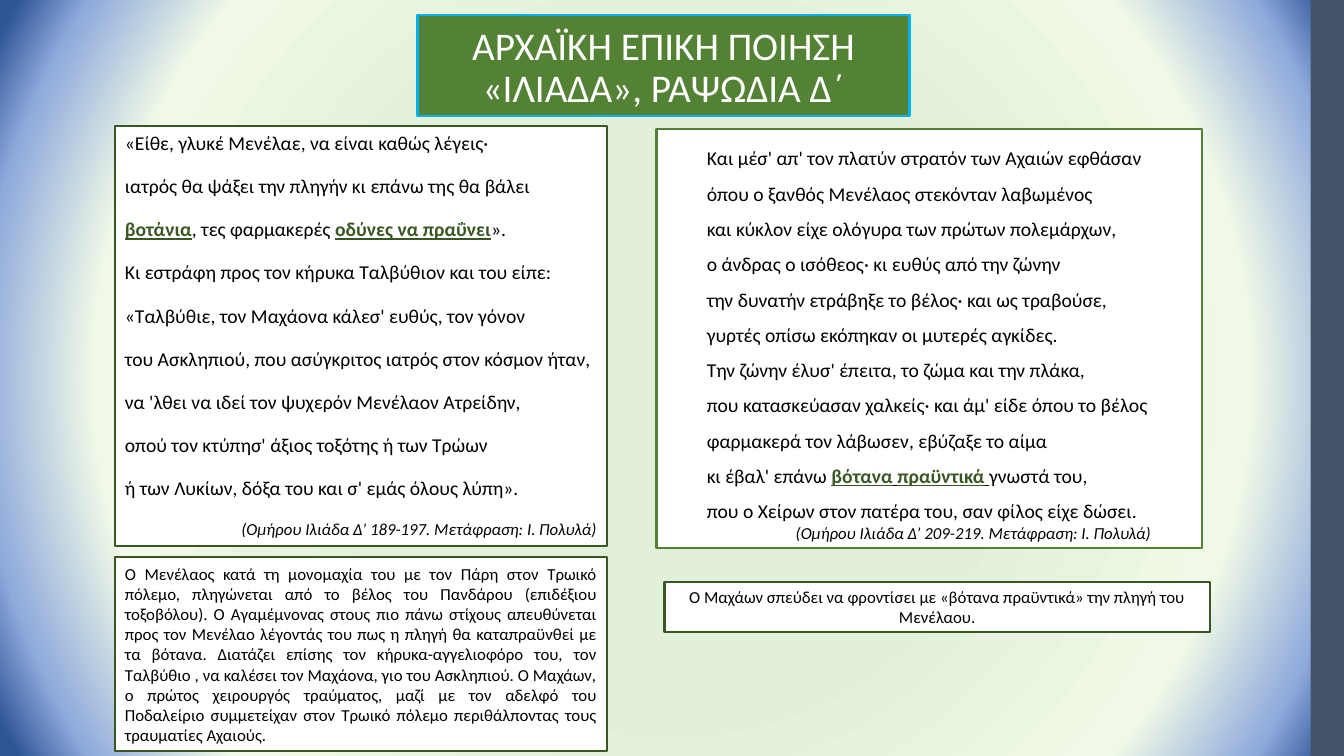
import pptx
import pptx.util
import pptx.oxml
import pptx.dml.color
import pptx.enum.shapes
import pptx.enum.text

Inches, Pt = pptx.util.Inches, pptx.util.Pt
ALIGN = pptx.enum.text.PP_ALIGN
ANCHOR = pptx.enum.text.MSO_ANCHOR

COLORS = {"white": "FFFFFF", "black": "000000", "green": "548235",
          "dark": "385723", "cyan": "00B0F0", "slate": "44546A"}
GLOW = [(42, "E2F0D9"), (75, "F0F9E7"), (90, "8FAADC"), (98, "2F5597")]

# In the texts, *...* marks underlined words and \n a line break.
TITLE = "ΑΡΧΑΪΚΗ ΕΠΙΚΗ ΠΟΙΗΣΗ\n«ΙΛΙΑΔΑ», ΡΑΨΩΔΙΑ Δ΄"
PLEA = [
    "«Είθε, γλυκέ Μενέλαε, να είναι καθώς λέγεις·",
    "ιατρός θα ψάξει την πληγήν κι επάνω της θα βάλει",
    "*βοτάνια*, τες φαρμακερές *οδύνες να πραΰνει*».",
    "Κι εστράφη προς τον κήρυκα Ταλβύθιον και του είπε:",
    "«Ταλβύθιε, τον Μαχάονα κάλεσ' ευθύς, τον γόνον",
    "του Ασκληπιού, που ασύγκριτος ιατρός στον κόσμον ήταν,",
    "να 'λθει να ιδεί τον ψυχερόν Μενέλαον Ατρείδην,",
    "οπού τον κτύπησ' άξιος τοξότης ή των Τρώων",
    "ή των Λυκίων, δόξα του και σ' εμάς όλους λύπη».",
]
PLEA_CITE = "(Ομήρου Ιλιάδα Δ’ 189-197. Μετάφραση: Ι. Πολυλά)"
CURE = [
    "Και μέσ' απ' τον πλατύν στρατόν των Αχαιών εφθάσαν",
    "όπου ο ξανθός Μενέλαος στεκόνταν λαβωμένος\n"
    "και κύκλον είχε ολόγυρα των πρώτων πολεμάρχων,\n"
    "ο άνδρας ο ισόθεος· κι ευθύς από την ζώνην\n"
    "την δυνατήν ετράβηξε το βέλος· και ως τραβούσε,\n"
    "γυρτές οπίσω εκόπηκαν οι μυτερές αγκίδες.",
    "Την ζώνην έλυσ' έπειτα, το ζώμα και την πλάκα,\n"
    "που κατασκεύασαν χαλκείς· και άμ' είδε όπου το βέλος\n"
    "φαρμακερά τον λάβωσεν, εβύζαξε το αίμα\n"
    "κι έβαλ' επάνω *βότανα** **πραϋντικά** *γνωστά του,\n"
    "που ο Χείρων στον πατέρα του, σαν φίλος είχε δώσει.",
]
CURE_CITE = "(Ομήρου Ιλιάδα Δ’ 209-219. Μετάφραση: Ι. Πολυλά)"
PLEA_NOTE = (
    "Ο Μενέλαος κατά τη μονομαχία του με τον Πάρη στον Τρωικό πόλεμο, "
    "πληγώνεται από το βέλος του Πανδάρου (επιδέξιου τοξοβόλου). "
    "Ο Αγαμέμνονας στους πιο πάνω στίχους απευθύνεται προς τον Μενέλαο "
    "λέγοντάς του πως η πληγή θα καταπραϋνθεί με τα βότανα. Διατάζει επίσης "
    "τον κήρυκα-αγγελιοφόρο του, τον Ταλβύθιο , να καλέσει τον Μαχάονα, γιο "
    "του Ασκληπιού. Ο Μαχάων, ο πρώτος χειρουργός τραύματος, μαζί με τον "
    "αδελφό του Ποδαλείριο συμμετείχαν στον Τρωικό πόλεμο περιθάλποντας τους "
    "τραυματίες Αχαιούς.")
CURE_NOTE = ("Ο Μαχάων σπεύδει να φροντίσει με «βότανα πραϋντικά» "
             "την πληγή του Μενέλαου.")


def tint(name):
    return pptx.dml.color.RGBColor.from_string(COLORS[name])


def add_box(slide, area, fill, line=None, width=1.75, anchor=ANCHOR.MIDDLE, side=0.1):
    box = slide.shapes.add_shape(pptx.enum.shapes.MSO_SHAPE.RECTANGLE,
                                 *(Inches(n) for n in area))
    box.shadow.inherit = False
    box.fill.solid()
    box.fill.fore_color.rgb = tint(fill)
    if line:
        box.line.color.rgb = tint(line)
        box.line.width = Pt(width)
    else:
        box.line.fill.background()
    frame = box.text_frame
    frame.word_wrap = True
    frame.vertical_anchor = anchor
    frame.margin_left = frame.margin_right = Inches(side)
    return frame


def add_text(frame, text, size=14, align=ALIGN.LEFT, color="black",
             before=0, spacing=1.0, italic=False):
    """Add a paragraph, filling the empty first one before making more."""
    first = frame.paragraphs[0]
    fresh = not first.runs
    para = first if fresh else frame.add_paragraph()
    para.alignment = align
    para.line_spacing = spacing
    para.space_before = Pt(0 if fresh else before)
    font = para.font
    font.name, font.size, font.italic = "Calibri", Pt(size), italic
    font.color.rgb = tint(color)
    for i, part in enumerate(text.split("*")):
        for j, piece in enumerate(part.split("\n")):
            if j:
                para.add_line_break()
            if not piece:
                continue
            run = para.add_run()
            run.text = piece
            if i % 2:
                run.font.underline = True
                if piece.strip():
                    run.font.bold = True
                    run.font.color.rgb = tint("dark")


def set_glow(slide):
    """Give the background a round gradient from the centre outwards."""
    slide.background.fill.gradient()
    grad = slide.background._cSld.xpath(".//a:gradFill")[0]
    stops = "".join(f'<a:gs pos="{pos * 1000}"><a:srgbClr val="{color}"/></a:gs>'
                    for pos, color in GLOW)
    grad.getparent().replace(grad, pptx.oxml.parse_xml(
        '<a:gradFill xmlns:a="http://schemas.openxmlformats.org/drawingml/2006/main"'
        f' rotWithShape="1"><a:gsLst>{stops}</a:gsLst><a:path path="circle">'
        '<a:fillToRect l="50000" t="50000" r="50000" b="50000"/></a:path></a:gradFill>'))


def main():
    deck = pptx.Presentation()
    deck.slide_width, deck.slide_height = Inches(13.33), Inches(7.5)
    slide = deck.slides.add_slide(deck.slide_layouts[6])
    set_glow(slide)
    add_box(slide, (13, 0, 0.33, 7.5), "slate")

    title = add_box(slide, (4.14, 0.15, 4.88, 1), "green", "cyan", anchor=ANCHOR.BOTTOM)
    add_text(title, TITLE, 28, ALIGN.CENTER, "white", spacing=0.9)

    plea = add_box(slide, (1.14, 1.25, 4.88, 4.17), "white", "dark", anchor=ANCHOR.TOP)
    for verse in PLEA:
        add_text(plea, verse, before=14)
    add_text(plea, PLEA_CITE, 12, ALIGN.RIGHT, before=14, italic=True)

    cure = add_box(slide, (6.51, 1.28, 5.41, 4.16), "white", "green", side=0.5)
    for verse in CURE:
        add_text(cure, verse, spacing=1.5)
    add_text(cure, CURE_CITE, 12, ALIGN.RIGHT, italic=True)

    for area, note, align in [
            ((1.14, 5.53, 4.88, 1.92), PLEA_NOTE, ALIGN.JUSTIFY),
            ((6.59, 5.77, 5.41, 0.5), CURE_NOTE, ALIGN.CENTER)]:
        add_text(add_box(slide, area, "white", "dark", 1.5), note, 12, align)

    deck.save("out.pptx")


if __name__ == "__main__":
    main()
